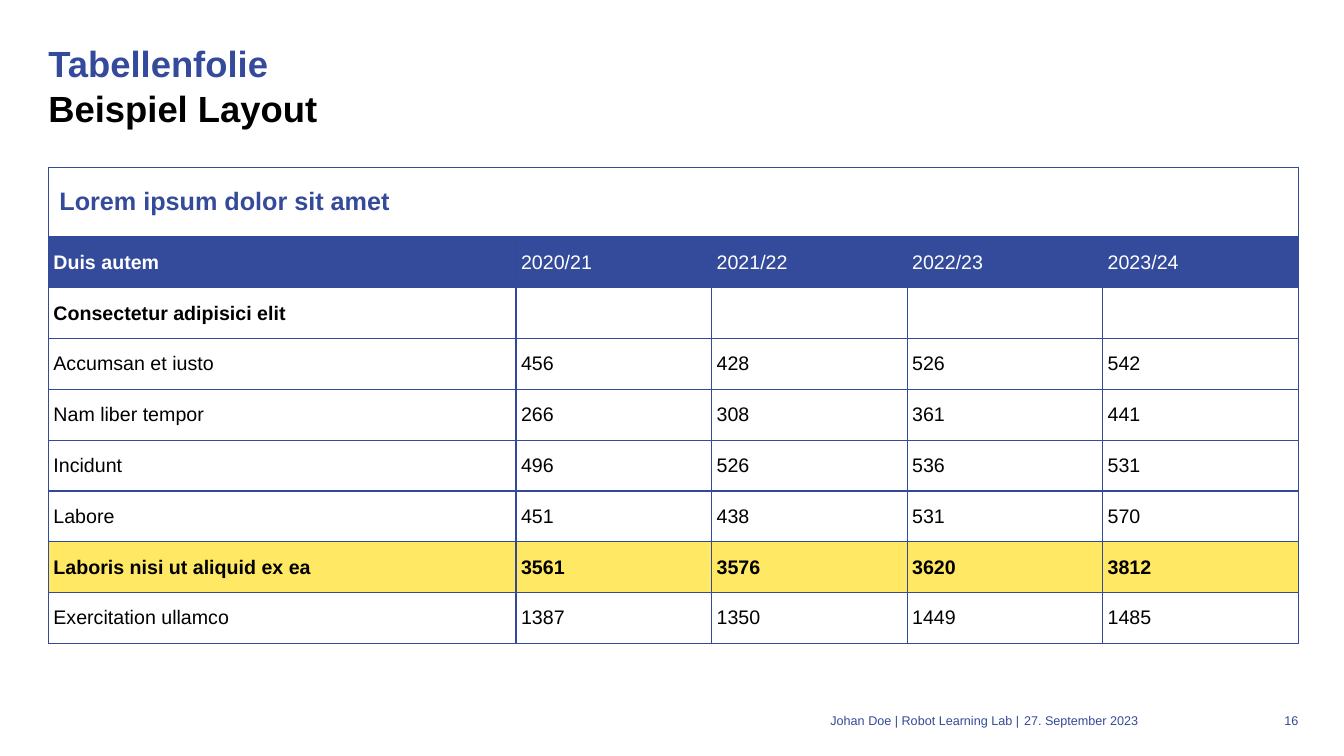
from pptx import Presentation
from pptx.util import Pt
from pptx.dml.color import RGBColor
from pptx.enum.text import PP_ALIGN, MSO_ANCHOR, MSO_AUTO_SIZE
from pptx.oxml import parse_xml
from pptx.oxml.ns import nsdecls

BLUE, BLACK, WHITE, YELLOW = "344A9A", "000000", "FFFFFF", "FFE863"
LEFT, WIDTH = 34.56, 892.8


def style(font, size, color, bold=False):
    font.name = "Arial"
    font.size = Pt(size)
    font.bold = bold
    font.color.rgb = RGBColor.from_string(color)


def border(cell):
    """Draw a thin blue line on all four sides; call before filling the cell."""
    props = cell._tc.get_or_add_tcPr()
    for side in ("lnL", "lnR", "lnT", "lnB"):
        props.append(parse_xml(
            f'<a:{side} {nsdecls("a")} w="12700"><a:solidFill>'
            f'<a:srgbClr val="334A9A"/></a:solidFill></a:{side}>'))


deck = Presentation()
deck.slide_width, deck.slide_height = Pt(960), Pt(540)
slide = deck.slides.add_slide(deck.slide_layouts[5])

# Title
title = slide.shapes.title
title.left, title.top = Pt(LEFT), Pt(28.8)
title.width, title.height = Pt(WIDTH), Pt(76.3)
frame = title.text_frame
frame.margin_left = frame.margin_right = frame.margin_top = frame.margin_bottom = 0
frame.vertical_anchor = MSO_ANCHOR.TOP
frame.word_wrap = True
frame.auto_size = MSO_AUTO_SIZE.NONE
para = frame.paragraphs[0]
para.alignment = PP_ALIGN.LEFT
para.line_spacing = Pt(32)
head = para.add_run()
head.text = "Tabellenfolie"
style(head.font, 26, BLUE, True)
para.add_line_break()
sub = para.add_run()
sub.text = "Beispiel Layout"
style(sub.font, 26, BLACK, True)

# Table
rows = [
    ["Lorem ipsum dolor sit amet", "", "", "", ""],
    ["Duis autem", "2020/21", "2021/22", "2022/23", "2023/24"],
    ["Consectetur adipisici elit", "", "", "", ""],
    ["Accumsan et iusto", "456", "428", "526", "542"],
    ["Nam liber tempor", "266", "308", "361", "441"],
    ["Incidunt", "496", "526", "536", "531"],
    ["Labore", "451", "438", "531", "570"],
    ["Laboris nisi ut aliquid ex ea", "3561", "3576", "3620", "3812"],
    ["Exercitation ullamco", "1387", "1350", "1449", "1485"],
]
TOP, HEAD, SUM = 0, 1, 7
BOLD = {(TOP, 0), (HEAD, 0), (2, 0)} | {(SUM, c) for c in range(5)}
fills = {HEAD: BLUE, SUM: YELLOW}
inks = {TOP: BLUE, HEAD: WHITE}

table = slide.shapes.add_table(
    len(rows), 5, Pt(LEFT), Pt(119.6), Pt(WIDTH), Pt(340)).table
table.first_row = table.horz_banding = False
for c, col in enumerate(table.columns):
    col.width = Pt(139.68 if c else 334.08)
for r, texts in enumerate(rows):
    table.rows[r].height = Pt(36.3 if r else 49.7)
    for c, text in enumerate(texts):
        cell = table.cell(r, c)
        border(cell)
        if r in fills:
            cell.fill.solid()
            cell.fill.fore_color.rgb = RGBColor.from_string(fills[r])
        else:
            cell.fill.background()
        cell.margin_left = cell.margin_right = Pt(3.6 if r else 7.9)
        cell.margin_top = cell.margin_bottom = Pt(3.6)
        cell.vertical_anchor = MSO_ANCHOR.MIDDLE
        cell.text = text
        style(cell.text_frame.paragraphs[0].font, 14 if r else 18,
              inks.get(r, BLACK), (r, c) in BOLD)
table.cell(TOP, 0).merge(table.cell(TOP, 4))

# Footer
footer = [
    ("Johan Doe | Robot Learning Lab |", 234.7, 493.2, 0, PP_ALIGN.RIGHT),
    ("27. September 2023", 728.6, 113, 2.9, PP_ALIGN.LEFT),
    ("16", 899.3, 28.1, 0, PP_ALIGN.RIGHT),
]
for text, left, width, inset, align in footer:
    box = slide.shapes.add_textbox(Pt(left), Pt(509), Pt(width), Pt(14.4))
    frame = box.text_frame
    frame.word_wrap = True
    frame.margin_left = Pt(inset)
    frame.margin_right = frame.margin_top = frame.margin_bottom = 0
    para = frame.paragraphs[0]
    para.text = text
    para.alignment = align
    style(para.font, 9, BLUE)

deck.save("out.pptx")
